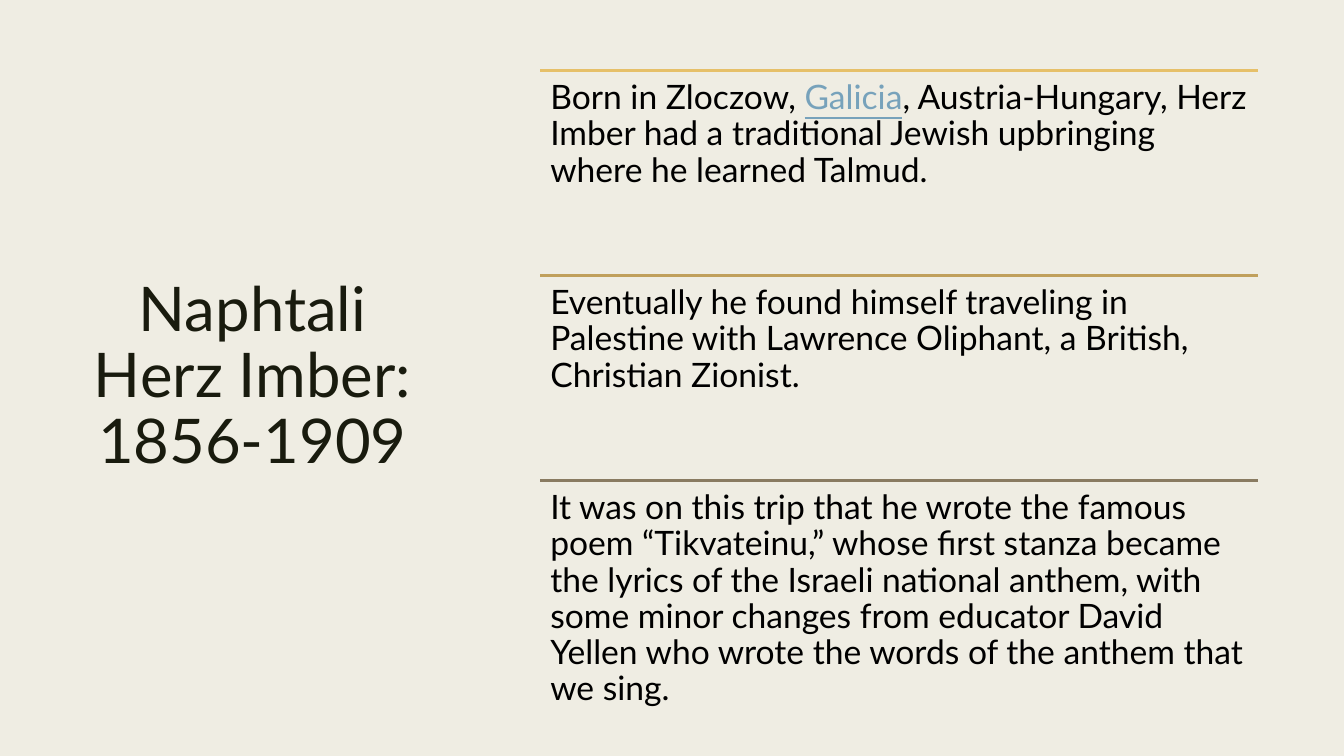
"""Build the Naphtali Herz Imber biography slide."""
from pptx import Presentation
from pptx.dml.color import RGBColor
from pptx.enum import shapes, text
from pptx.oxml import xmlchemy
from pptx.util import Pt

TITLE = "Naphtali Herz Imber: 1856-1909"
EVENTS = [
    ("gold", [("Born in Zloczow, ", "black"), ("Galicia", "link"),
              (", Austria-Hungary, Herz Imber had a traditional Jewish upbringing "
               "where he learned Talmud.", "black")]),
    ("bronze", [("Eventually he found himself traveling in Palestine with "
                 "Lawrence Oliphant, a British, Christian Zionist.", "black")]),
    ("taupe", [("It was on this trip that he wrote the famous poem “Tikvateinu,” "
                "whose first stanza became the lyrics of the Israeli national anthem, "
                "with some minor changes from educator David Yellen who wrote the "
                "words of the anthem that we sing.", "black")]),
]
COLORS = {"paper": "EFEDE3", "ink": "191B0E", "black": "000000", "link": "77A2BB",
          "gold": "E6C069", "bronze": "C0A05C", "taupe": "897B61"}
FONT = "Lato"
PX = 9144
SLIDE_W, SLIDE_H = 1333, 750
TOP, HEIGHT = 70, 610
TITLE_LEFT, TITLE_W = 70, 361
LIST_LEFT, LIST_W = 536, 712
INSET = 10


def color(name):
    return RGBColor.from_string(COLORS[name])


def style(font, size, name):
    font.name, font.size = FONT, Pt(size)
    font.color.rgb = color(name)


def place(shape, left, top, width, height):
    shape.left, shape.top = round(left * PX), round(top * PX)
    shape.width, shape.height = round(width * PX), round(height * PX)


def add_title(page):
    title = page.shapes.title
    place(title, TITLE_LEFT, TOP, TITLE_W, HEIGHT)
    frame = title.text_frame
    frame.text = TITLE
    frame.word_wrap = True
    frame.auto_size = text.MSO_AUTO_SIZE.NONE
    frame.vertical_anchor = text.MSO_ANCHOR.MIDDLE
    para = frame.paragraphs[0]
    para.alignment = text.PP_ALIGN.CENTER
    para.line_spacing = 0.89
    style(para.runs[0].font, 44, "ink")


def add_rule(page, top, name):
    y = round(top * PX)
    rule = page.shapes.add_connector(shapes.MSO_CONNECTOR.STRAIGHT, LIST_LEFT * PX, y,
                                     (LIST_LEFT + LIST_W) * PX, y)
    rule.line.color.rgb = color(name)
    rule.line.width = Pt(2.75)
    rule._element.spPr.append(xmlchemy.OxmlElement("a:effectLst"))


def add_event(page, top, height, spans):
    box = page.shapes.add_textbox(0, 0, 0, 0)
    place(box, LIST_LEFT, top, LIST_W, height)
    frame = box.text_frame
    frame.word_wrap = True
    frame.margin_left = frame.margin_right = INSET * PX
    frame.margin_top = frame.margin_bottom = INSET * PX
    para = frame.paragraphs[0]
    para.line_spacing = 0.9
    for words, name in spans:
        span = para.add_run()
        span.text = words
        style(span.font, 24, name)
        span.font.underline = name == "link"


def main():
    deck = Presentation()
    deck.slide_width, deck.slide_height = SLIDE_W * PX, SLIDE_H * PX
    page = deck.slides.add_slide(deck.slide_layouts[5])
    page.background.fill.solid()
    page.background.fill.fore_color.rgb = color("paper")
    add_title(page)
    step = HEIGHT / len(EVENTS)
    for index, (rule_color, spans) in enumerate(EVENTS):
        top = TOP + index * step
        add_rule(page, top, rule_color)
        add_event(page, top, step, spans)
    deck.save("out.pptx")


if __name__ == "__main__":
    main()
